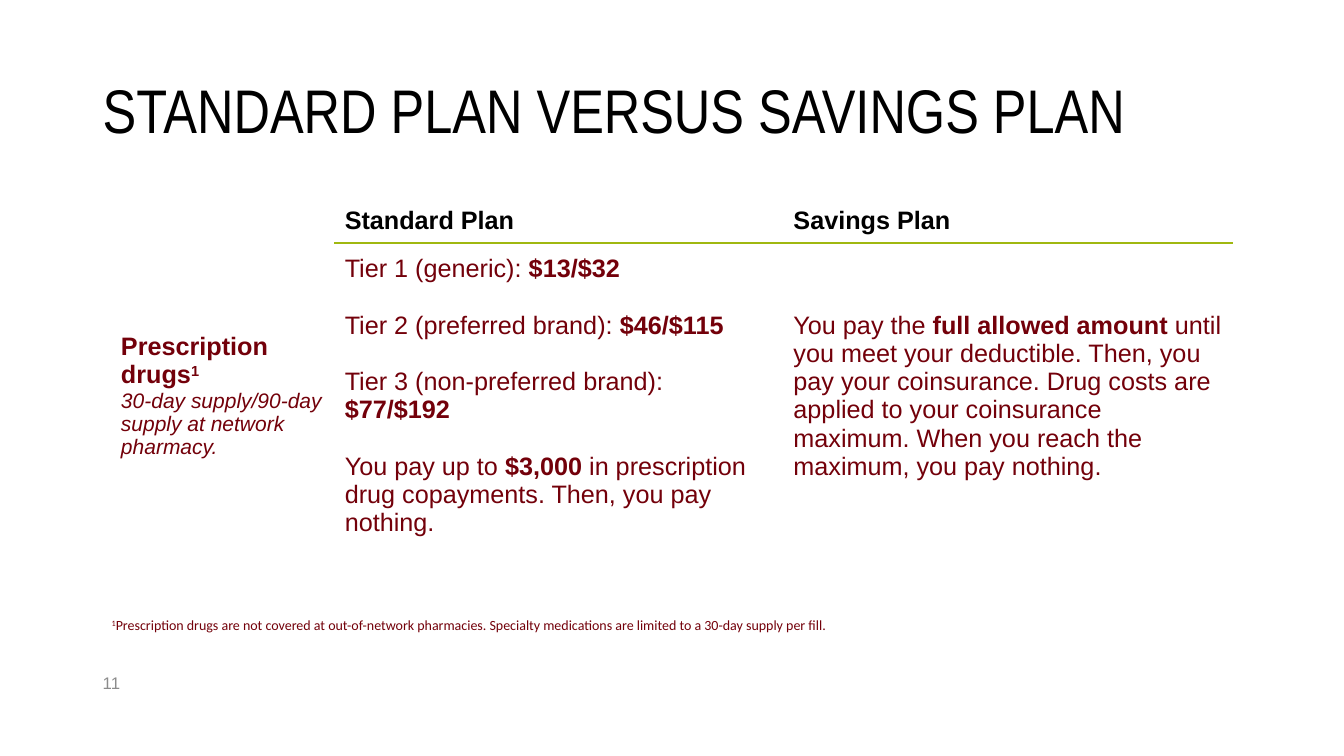
from dataclasses import dataclass

from lxml.etree import SubElement
from pptx import Presentation
from pptx.dml.color import RGBColor
from pptx.enum.text import MSO_ANCHOR as Anchor
from pptx.oxml.ns import qn
from pptx.util import Inches, Pt

BLACK, GARNET, GRAY, GREEN = "000000", "73000A", "8C8C8C", "A0B810"
LINE_GAP = 20.1


@dataclass(frozen=True)
class Span:
    text: str
    bold: bool = False
    italic: bool = False
    superscript: bool = False
    size: float = 18


@dataclass(frozen=True)
class Style:
    font: str = "Arial"
    color: str = GARNET
    gap: float = 0
    line_spacing: float = 1.0


@dataclass(frozen=True)
class Label:
    left: float
    top: float
    width: float
    height: float
    spans: list[Span]
    style: Style
    anchor: Anchor = Anchor.MIDDLE


@dataclass(frozen=True)
class PlanCell:
    row: int
    column: int
    paragraphs: list[list[Span]]
    style: Style = Style()
    anchor: Anchor = Anchor.MIDDLE


LABELS = [
    Label(0.92, 0.4, 11.5, 1.45, [Span("STANDARD PLAN VERSUS SAVINGS PLAN", size=44)],
          Style("Arial Narrow", BLACK, line_spacing=0.9)),
    Label(0.92, 6.57, 2.88, 0.4, [Span("11", size=12)], Style(color=GRAY)),
    Label(1.01, 6.07, 9, 0.27, [
        Span("1", superscript=True, size=10),
        Span("Prescription drugs are not covered at out-of-network pharmacies. "
             "Specialty medications are limited to a 30-day supply per fill.", size=10),
    ], Style("Calibri"), Anchor.TOP),
]

HEADER = Style(color=BLACK)
CELLS = [
    PlanCell(0, 1, [[Span("Standard Plan", bold=True)]], HEADER, Anchor.TOP),
    PlanCell(0, 2, [[Span("Savings Plan", bold=True)]], HEADER, Anchor.TOP),
    PlanCell(1, 0, [
        [Span("Prescription drugs", bold=True), Span("1", bold=True, superscript=True)],
        [Span("30-day supply/90-day supply at network pharmacy.", italic=True, size=15)],
    ]),
    PlanCell(1, 1, [
        [Span("Tier 1 (generic): "), Span("$13/$32", bold=True)],
        [Span("Tier 2 (preferred brand): "), Span("$46/$115", bold=True)],
        [Span("Tier 3 (non-preferred brand): "), Span("$77/$192", bold=True)],
        [Span("You pay up to "), Span("$3,000 ", bold=True),
         Span("in prescription drug copayments. Then, you pay nothing.")],
    ], Style(gap=LINE_GAP)),
    PlanCell(1, 2, [
        [Span("You pay the "), Span("full allowed amount ", bold=True),
         Span("until you meet your deductible. Then, you pay your coinsurance. "
              "Drug costs are applied to your coinsurance maximum. "
              "When you reach the maximum, you pay nothing.")],
    ]),
]
COLUMN_WIDTHS = [2.22, 4.45, 4.45]
ROW_HEIGHTS = [0.41, 2.89]


def rgb(color: str) -> RGBColor:
    return RGBColor.from_string(color)


def write(text_frame, paragraphs: list[list[Span]], style: Style) -> None:
    for index, spans in enumerate(paragraphs):
        paragraph = text_frame.add_paragraph() if index else text_frame.paragraphs[0]
        paragraph.line_spacing = style.line_spacing
        paragraph.space_before = Pt(style.gap if index else 0)
        for span in spans:
            run = paragraph.add_run()
            run.text = span.text
            font = run.font
            font.name, font.size = style.font, Pt(span.size)
            font.bold, font.italic = span.bold, span.italic
            font.color.rgb = rgb(style.color)
            if span.superscript:
                run._r.get_or_add_rPr().set("baseline", "30000")


def add_label(slide, label: Label) -> None:
    box = slide.shapes.add_textbox(Inches(label.left), Inches(label.top),
                                   Inches(label.width), Inches(label.height))
    box.text_frame.word_wrap = True
    box.text_frame.vertical_anchor = label.anchor
    write(box.text_frame, [label.spans], label.style)


def add_border(cell, side: str) -> None:
    """Draw a green rule on one side of a cell: lnT or lnB."""
    properties = cell._tc.get_or_add_tcPr()
    line = SubElement(properties, qn(f"a:{side}"), w=str(Pt(2.25)))
    fill = SubElement(line, qn("a:solidFill"))
    SubElement(fill, qn("a:srgbClr"), val=GREEN)


def add_plan_table(slide) -> None:
    frame = slide.shapes.add_table(
        len(ROW_HEIGHTS), len(COLUMN_WIDTHS), Inches(1.1), Inches(2),
        Inches(sum(COLUMN_WIDTHS)), Inches(sum(ROW_HEIGHTS)))
    table = frame.table
    table.first_row = table.horz_banding = False
    for column, width in zip(table.columns, COLUMN_WIDTHS):
        column.width = Inches(width)
    for row, height in zip(table.rows, ROW_HEIGHTS):
        row.height = Inches(height)
    for column in (1, 2):
        add_border(table.cell(0, column), "lnB")
        add_border(table.cell(1, column), "lnT")
    for cell in table.iter_cells():
        cell.fill.background()
    for plan_cell in CELLS:
        cell = table.cell(plan_cell.row, plan_cell.column)
        cell.vertical_anchor = plan_cell.anchor
        write(cell.text_frame, plan_cell.paragraphs, plan_cell.style)


def main() -> None:
    presentation = Presentation()
    presentation.slide_width = Inches(13.33)
    presentation.slide_height = Inches(7.5)
    slide = presentation.slides.add_slide(presentation.slide_layouts[6])
    for label in LABELS:
        add_label(slide, label)
    add_plan_table(slide)
    presentation.save("out.pptx")


if __name__ == "__main__":
    main()
